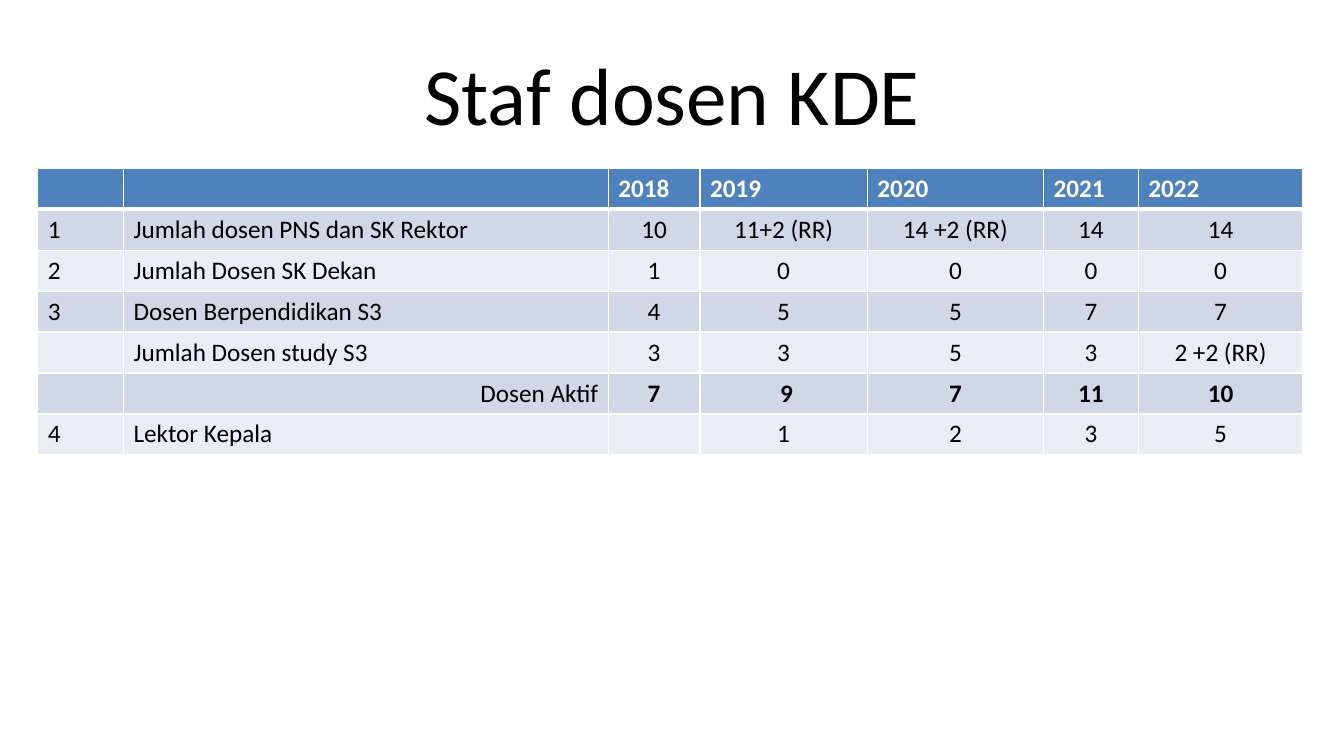
from lxml.etree import SubElement
from pptx import Presentation
from pptx.dml.color import RGBColor
from pptx.enum.text import MSO_ANCHOR, MSO_AUTO_SIZE, PP_ALIGN
from pptx.oxml.ns import qn
from pptx.util import Pt

COLORS = {"header": "4F81BD", "odd": "D0D8E8", "even": "E9EDF4",
          "white": "FFFFFF", "black": "000000"}
FONT = "Calibri"
COL_WIDTHS = [61.2, 346.3, 65.5, 119.5, 126, 67.7, 117.4]
ROW_HEIGHT = 29.25
TOTAL_LABEL = "Dosen Aktif"
STAFF_ROWS = [
    ["", "", "2018", "2019", "2020", "2021", "2022"],
    ["1", "Jumlah dosen PNS dan SK Rektor", "10", "11+2 (RR)", "14 +2 (RR)", "14", "14"],
    ["2", "Jumlah Dosen SK Dekan", "1", "0", "0", "0", "0"],
    ["3", "Dosen Berpendidikan S3", "4", "5", "5", "7", "7"],
    ["", "Jumlah Dosen study S3", "3", "3", "5", "3", "2 +2 (RR)"],
    ["", TOTAL_LABEL, "7", " 9", "7", "11", "10"],
    ["4", "Lektor Kepala", "", "1", "2", "3", "5"],
]


def rgb(name):
    return RGBColor.from_string(COLORS[name])


def style_font(font, size, color, bold=False):
    font.name, font.size, font.bold = FONT, Pt(size), bold
    font.color.rgb = rgb(color)


def add_title(s, text, left, top, width, height):
    sp = s.shapes.title
    sp.left, sp.top, sp.width, sp.height = Pt(left), Pt(top), Pt(width), Pt(height)
    tf = sp.text_frame
    tf.text = text
    tf.auto_size = MSO_AUTO_SIZE.NONE
    tf.vertical_anchor = MSO_ANCHOR.MIDDLE
    p = tf.paragraphs[0]
    p.alignment = PP_ALIGN.CENTER
    style_font(p.runs[0].font, 58, "black")


def set_borders(cell, widths):
    tc_pr = cell._tc.get_or_add_tcPr()
    for side, width in widths.items():
        ln = SubElement(tc_pr, qn(f"a:ln{side}"), w=str(Pt(width)))
        fill = SubElement(ln, qn("a:solidFill"))
        SubElement(fill, qn("a:srgbClr"), val=COLORS["white"])


def cell_alignment(row, col):
    if row == 0:
        return PP_ALIGN.LEFT
    if col >= 2:
        return PP_ALIGN.CENTER
    return PP_ALIGN.RIGHT if STAFF_ROWS[row][col] == TOTAL_LABEL else PP_ALIGN.LEFT


def add_staff_table(s, left, top):
    table = s.shapes.add_table(
        len(STAFF_ROWS), len(COL_WIDTHS), Pt(left), Pt(top),
        Pt(sum(COL_WIDTHS)), Pt(ROW_HEIGHT * len(STAFF_ROWS))).table
    for column, width in zip(table.columns, COL_WIDTHS):
        column.width = Pt(width)
    for i, values in enumerate(STAFF_ROWS):
        table.rows[i].height = Pt(ROW_HEIGHT)
        header = i == 0
        band = "header" if header else "odd" if i % 2 else "even"
        for j, value in enumerate(values):
            cell = table.cell(i, j)
            # Thicker rule between the header and the body
            set_borders(cell, {"L": 1, "R": 1, "T": 3 if i == 1 else 1,
                               "B": 3 if header else 1})
            cell.fill.solid()
            cell.fill.fore_color.rgb = rgb(band)
            cell.text_frame.text = value
            p = cell.text_frame.paragraphs[0]
            p.alignment = cell_alignment(i, j)
            bold = header or (values[1] == TOTAL_LABEL and j >= 2)
            for font in [p.font] + [r.font for r in p.runs]:
                style_font(font, 18, "white" if header else "black", bold)


def main():
    prs = Presentation()
    prs.slide_width, prs.slide_height = Pt(960), Pt(540)
    s = prs.slides.add_slide(prs.slide_layouts[5])
    add_title(s, "Staf dosen KDE", 48, 21.6, 864, 90)
    add_staff_table(s, 27, 120.3)
    prs.save("out.pptx")


if __name__ == "__main__":
    main()
